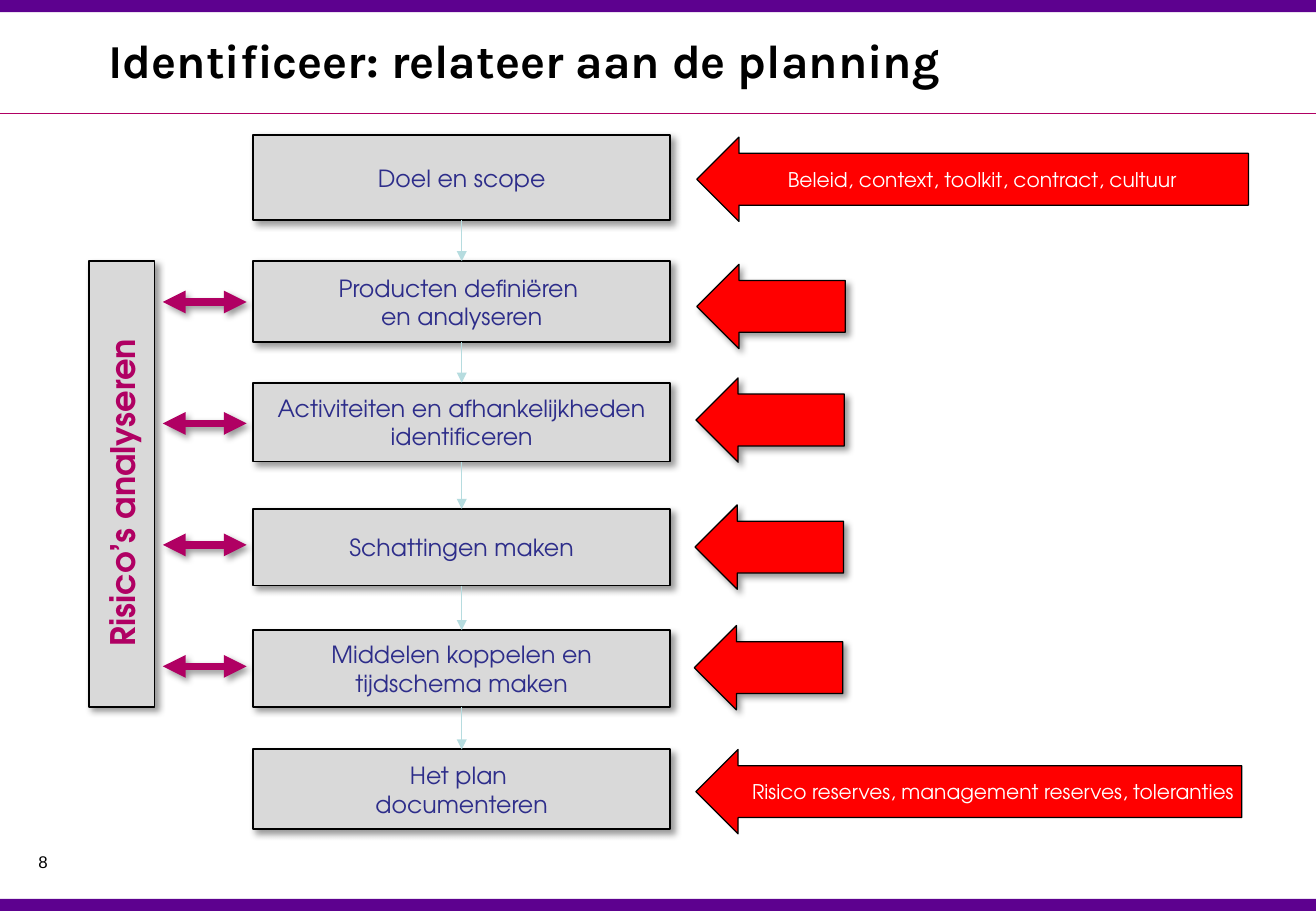
import dataclasses

import lxml.etree
import pptx
import pptx.dml.color
import pptx.enum.shapes
import pptx.enum.text
import pptx.oxml.ns
import pptx.util

Pt = pptx.util.Pt
Rgb = pptx.dml.color.RGBColor.from_string
Kind = pptx.enum.shapes.MSO_SHAPE
Align = pptx.enum.text.PP_ALIGN
Anchor = pptx.enum.text.MSO_ANCHOR
qn = pptx.oxml.ns.qn


@dataclasses.dataclass(frozen=True)
class Theme:
    black: str = "000000"
    white: str = "FFFFFF"
    band: str = "5D018F"
    risk: str = "B00063"
    box: str = "D9D9D9"
    ink: str = "2D2D8A"
    flow: str = "B6DCDF"
    input: str = "FF0000"
    head: str = "Karla"
    body: str = "TeX Gyre Adventor"
    plain: str = "Arial"
    title: int = 28
    bar: int = 20
    step: int = 14
    note: int = 12
    page: int = 10


THEME = Theme()
WIDE, HIGH = 780, 540
BOX_X, BOX_W = 150, 247.4

# Step text, box top, box height
STEPS = [
    ("Doel en scope", 80, 50.6),
    ("Producten definiëren \ven analyseren", 154.8, 48.2),
    ("Activiteiten en afhankelijkheden identificeren", 226.8, 46.8),
    ("Schattingen maken", 301.7, 45.4),
    ("Middelen koppelen en tijdschema maken", 373.6, 45.4),
    ("Het plan \vdocumenteren", 444.2, 47.5),
]

# Arrow left, top, width, text, text indent
INPUTS = [
    (413, 81.3, 327, "Beleid, context, toolkit, contract, cultuur", 38.7),
    (413, 156.7, 88, "", 0),
    (412.5, 224, 88, "", 0),
    (412, 299.3, 88, "", 0),
    (411.5, 370.8, 88, "", 0),
    (412.5, 444.3, 323.5,
     "Risico reserves, management reserves, toleranties", 18),
]


def write(shape, text, size, color, font=THEME.body, bold=False,
          align=Align.CENTER, inset=(0, 0, 0, 0)):
    """Set and format text; inset is left, top, right, bottom."""
    frame = shape.text_frame
    frame.text = text
    frame.word_wrap = True
    frame.auto_size = pptx.enum.text.MSO_AUTO_SIZE.NONE
    frame.vertical_anchor = Anchor.MIDDLE
    (frame.margin_left, frame.margin_top,
     frame.margin_right, frame.margin_bottom) = map(Pt, inset)
    para = frame.paragraphs[0]
    para.alignment = align
    for run in para.runs:
        run.font.name = font
        run.font.size = Pt(size)
        run.font.bold = bold
        run.font.color.rgb = Rgb(color)


def shade(shape):
    """Add a soft shadow to the empty effect list of a shape or line."""
    effects = shape._element.spPr.find(qn("a:effectLst"))
    shadow = lxml.etree.SubElement(
        effects, qn("a:outerShdw"), blurRad=str(Pt(4)), dist=str(Pt(3)),
        dir="2700000", algn="tl", rotWithShape="0")
    color = lxml.etree.SubElement(shadow, qn("a:srgbClr"), val=THEME.black)
    lxml.etree.SubElement(color, qn("a:alpha"), val="40000")


def block(slide, kind, left, top, width, height, fill, edge=0):
    """Add a filled shape; an edge of 0 means no outline."""
    shape = slide.shapes.add_shape(
        kind, Pt(left), Pt(top), Pt(width), Pt(height))
    shape.fill.solid()
    shape.fill.fore_color.rgb = Rgb(fill)
    if edge:
        shape.line.color.rgb = Rgb(THEME.black)
        shape.line.width = Pt(edge)
    else:
        shape.line.fill.background()
    shape.shadow.inherit = False
    return shape


def card(slide, left, top, width, height):
    shape = block(slide, Kind.RECTANGLE, left, top, width, height,
                  THEME.box, 1.13)
    shade(shape)
    return shape


def rule(slide, x1, y1, x2, y2, color, weight, ends=()):
    """Add a line; ends names the ends that carry an arrowhead."""
    line = slide.shapes.add_connector(
        pptx.enum.shapes.MSO_CONNECTOR.STRAIGHT,
        Pt(x1), Pt(y1), Pt(x2), Pt(y2))
    line.line.color.rgb = Rgb(color)
    line.line.width = Pt(weight)
    props = line._element.spPr
    for end in ends:
        lxml.etree.SubElement(props.find(qn("a:ln")), qn(f"a:{end}"),
                              type="triangle")
    lxml.etree.SubElement(props, qn("a:effectLst"))
    return line


def frame(slide):
    """Draw the bands, title, title rule and page number."""
    for top in (0, HIGH - 7.2):
        block(slide, Kind.RECTANGLE, 0, top, WIDE, 7.2, THEME.band)
    rule(slide, 0, 67.5, WIDE, 67.5, THEME.risk, 0.75)
    title = slide.shapes.title
    title.left, title.top = Pt(57), Pt(5)
    title.width, title.height = Pt(723), Pt(60.5)
    write(title, "Identificeer: relateer aan de planning", THEME.title,
          THEME.black, THEME.head, True, Align.LEFT, (7.2, 3.6, 7.2, 3.6))
    page = slide.shapes.add_textbox(Pt(7), Pt(501), Pt(37), Pt(19.5))
    write(page, "8", THEME.page, THEME.black, THEME.plain)


def steps(slide):
    cards = []
    for text, top, height in STEPS:
        shape = card(slide, BOX_X, top, BOX_W, height)
        write(shape, text, THEME.step, THEME.ink, inset=(10, 0, 10, 0))
        cards.append(shape)
    for first, second in zip(cards, cards[1:]):
        link = rule(slide, 0, 0, 0, 0, THEME.flow, 0.75, ["tailEnd"])
        link.begin_connect(first, 2)
        link.end_connect(second, 0)


def risks(slide):
    bar = card(slide, 52.6, 154.8, 39, 264.2)
    write(bar, "Risico’s analyseren", THEME.bar, THEME.risk, bold=True,
          inset=(0, 10, 0, 0))
    bar.text_frame._txBody.bodyPr.set("vert", "vert270")
    for row in range(4):
        y = 179 + 72 * row
        line = rule(slide, 96.5, y, 146.2, y, THEME.risk, 4.5,
                    ["headEnd", "tailEnd"])
        shade(line)


def inputs(slide):
    for left, top, width, text, indent in INPUTS:
        arrow = block(slide, Kind.LEFT_ARROW, left, top, width, 50,
                      THEME.input, 0.75)
        arrow.adjustments[0] = 0.614
        arrow.adjustments[1] = 0.5
        if text:
            write(arrow, text, THEME.note, THEME.white, align=Align.LEFT,
                  inset=(indent, 0, 0, 0))
        else:
            shade(arrow)


def main():
    deck = pptx.Presentation()
    deck.slide_width, deck.slide_height = Pt(WIDE), Pt(HIGH)
    slide = deck.slides.add_slide(deck.slide_layouts[5])
    frame(slide)
    risks(slide)
    steps(slide)
    inputs(slide)
    deck.save("out.pptx")


if __name__ == "__main__":
    main()
